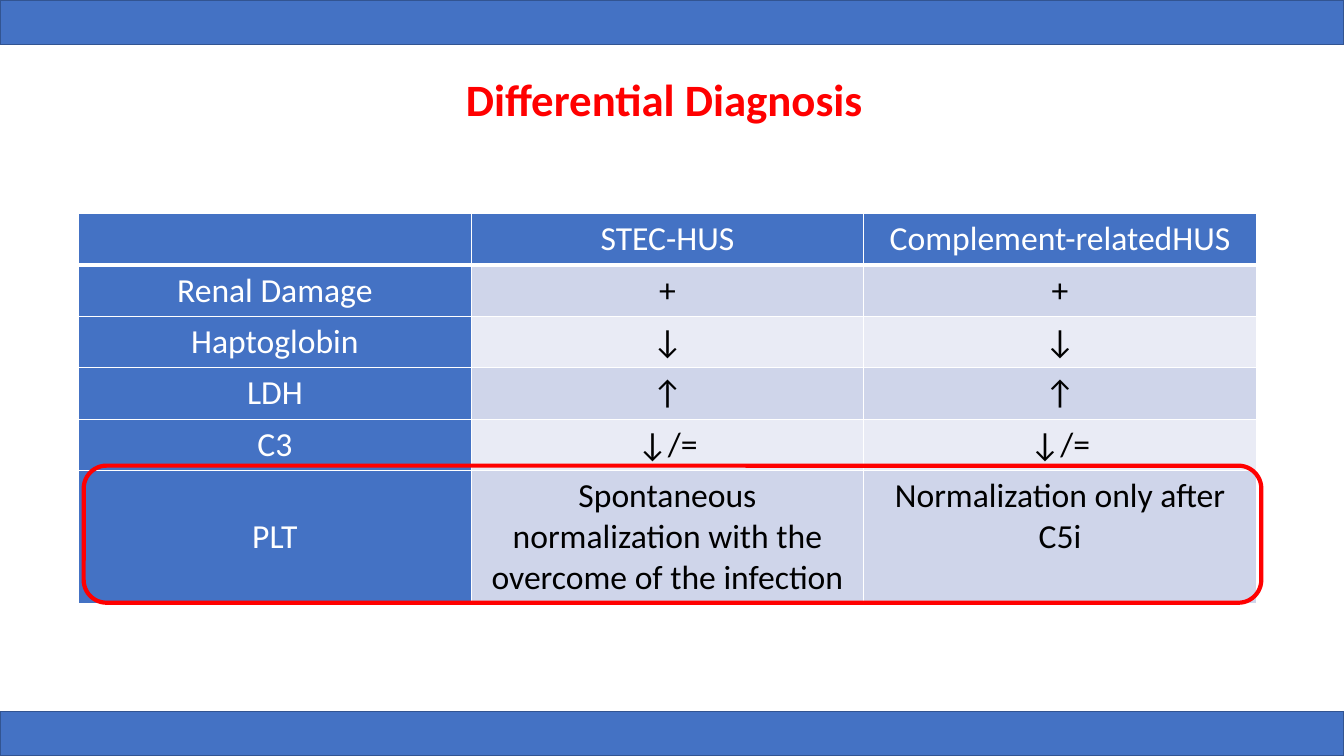
from lxml import etree
from pptx import Presentation
from pptx.dml.color import RGBColor
from pptx.enum import shapes, text
from pptx.oxml import ns
from pptx.util import Inches, Pt

TITLE = "Differential Diagnosis"
ROWS = [
    ("", "STEC-HUS", "Complement-relatedHUS"),
    ("Renal Damage", "+", "+"),
    ("Haptoglobin", "↓", "↓"),
    ("LDH", "↑", "↑"),
    ("C3", "↓/=", "↓/="),
    ("PLT", "Spontaneous normalization with the overcome of the infection",
     "Normalization only after C5i"),
]

FONT = "Calibri"
BLUE = RGBColor(0x44, 0x72, 0xC4)
DARK_BLUE = RGBColor(0x32, 0x54, 0x91)
BAND_DARK = RGBColor(0xCF, 0xD5, 0xEA)
BAND_LIGHT = RGBColor(0xE9, 0xEB, 0xF5)
RED = RGBColor(0xFF, 0, 0)
WHITE = RGBColor(0xFF, 0xFF, 0xFF)
BLACK = RGBColor(0, 0, 0)

SLIDE_WIDTH, SLIDE_HEIGHT, BAR_HEIGHT = 13.33, 7.5, 0.44
TABLE_LEFT, TABLE_TOP, TABLE_WIDTH = 0.78, 2.12, 11.68
ROW_HEIGHT, LAST_ROW_HEIGHT = 0.51, 1.31


def add_run(paragraph, words, size, color, bold=False):
    """Add one formatted run to a paragraph."""
    run = paragraph.add_run()
    run.text = words
    run.font.name, run.font.size, run.font.bold = FONT, Pt(size), bold
    run.font.color.rgb = color


def add_outline(slide, kind, box, color, width, fill=None):
    """Add an outlined preset shape, filled when a fill is given."""
    shape = slide.shapes.add_shape(kind, *map(Inches, box))
    shape.shadow.inherit = False
    shape.line.color.rgb, shape.line.width = color, Pt(width)
    if fill is None:
        shape.fill.background()
    else:
        shape.fill.solid()
        shape.fill.fore_color.rgb = fill


def set_borders(cell, bottom_width):
    """Draw white borders round a table cell."""
    properties = cell._tc.get_or_add_tcPr()
    widths = {"lnL": 1, "lnR": 1, "lnT": 1, "lnB": bottom_width}
    for index, (side, width) in enumerate(widths.items()):
        line = etree.Element(ns.qn(f"a:{side}"), w=str(Pt(width)))
        fill = etree.SubElement(line, ns.qn("a:solidFill"))
        etree.SubElement(fill, ns.qn("a:srgbClr"), val=str(WHITE))
        properties.insert(index, line)


def add_comparison(slide):
    """Add the table comparing the two syndromes."""
    heights = [ROW_HEIGHT] * (len(ROWS) - 1) + [LAST_ROW_HEIGHT]
    table = slide.shapes.add_table(
        len(ROWS), len(ROWS[0]), Inches(TABLE_LEFT), Inches(TABLE_TOP),
        Inches(TABLE_WIDTH), Inches(sum(heights))).table
    for row_index, row in enumerate(ROWS):
        table.rows[row_index].height = Inches(heights[row_index])
        for column_index, words in enumerate(row):
            cell = table.cell(row_index, column_index)
            is_heading = row_index == 0 or column_index == 0
            band = BAND_DARK if row_index % 2 else BAND_LIGHT
            cell.fill.solid()
            cell.fill.fore_color.rgb = BLUE if is_heading else band
            set_borders(cell, 1 if row_index else 3)
            if row_index and column_index == 0:
                cell.vertical_anchor = text.MSO_ANCHOR.MIDDLE
            paragraph = cell.text_frame.paragraphs[0]
            paragraph.alignment = text.PP_ALIGN.CENTER
            if words:
                add_run(paragraph, words, 24, WHITE if is_heading else BLACK)


def add_title(slide):
    """Place and fill the slide title."""
    title = slide.shapes.title
    title.left, title.top = Inches(4.52), Inches(0.66)
    title.width, title.height = Inches(4.2), Inches(0.64)
    title.text_frame.vertical_anchor = text.MSO_ANCHOR.TOP
    paragraph = title.text_frame.paragraphs[0]
    paragraph.alignment = text.PP_ALIGN.LEFT
    add_run(paragraph, TITLE, 32, RED, bold=True)


def main():
    """Build the slide and save it."""
    presentation = Presentation()
    presentation.slide_width = Inches(SLIDE_WIDTH)
    presentation.slide_height = Inches(SLIDE_HEIGHT)
    slide = presentation.slides.add_slide(presentation.slide_layouts[5])
    add_title(slide)
    for top in (0, SLIDE_HEIGHT - BAR_HEIGHT):
        add_outline(slide, shapes.MSO_SHAPE.RECTANGLE,
                    (0, top, SLIDE_WIDTH, BAR_HEIGHT), DARK_BLUE, 1, BLUE)
    add_comparison(slide)
    add_outline(slide, shapes.MSO_SHAPE.ROUNDED_RECTANGLE,
                (0.83, 4.62, TABLE_WIDTH, 1.36), RED, 3)
    presentation.save("out.pptx")


if __name__ == "__main__":
    main()
